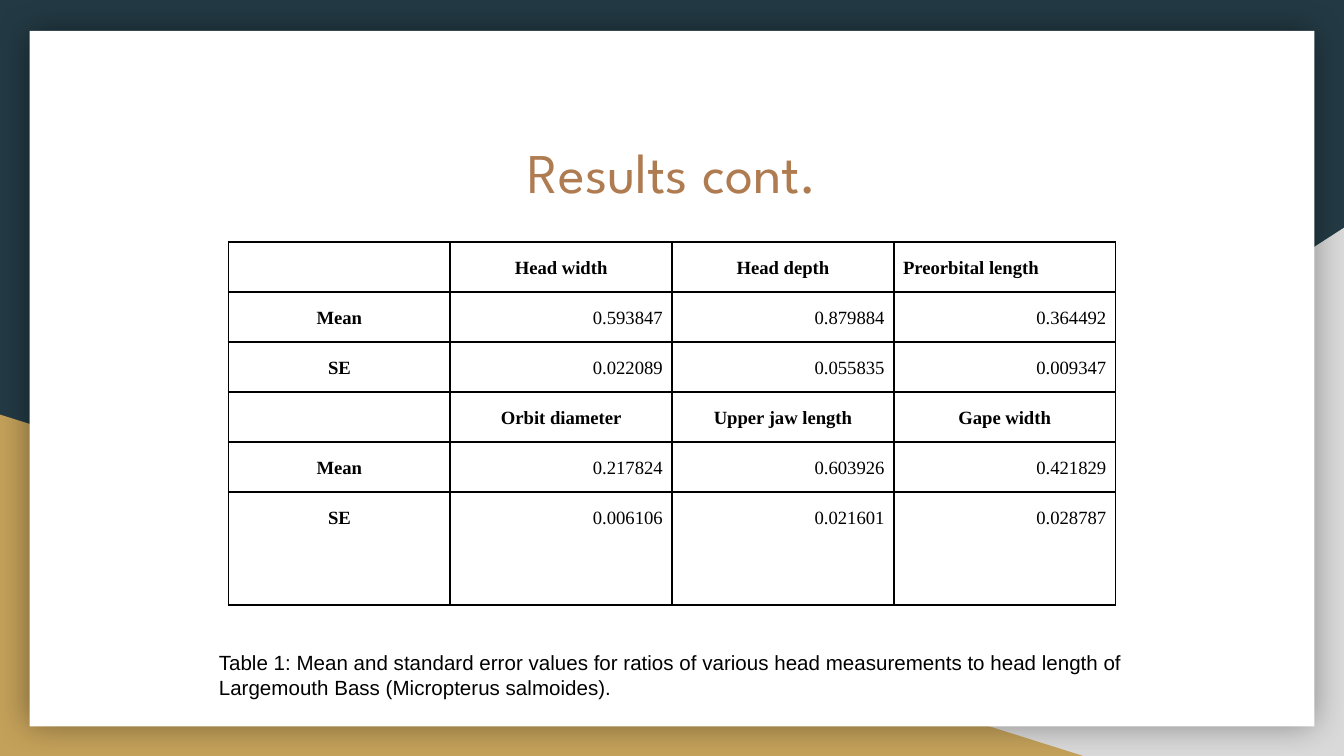
import pptx
import pptx.util
import pptx.dml.color
import pptx.enum.shapes
import pptx.enum.text
import pptx.oxml
import pptx.oxml.ns
from lxml import etree

Inches, Pt = pptx.util.Inches, pptx.util.Pt
Shape = pptx.enum.shapes.MSO_SHAPE
Align = pptx.enum.text.PP_ALIGN
qn = pptx.oxml.ns.qn

WIDE, HIGH = 10, 45 / 8
TITLE = {"name": "League Spartan", "size": Pt(30)}
HEAD = {"name": "Times New Roman", "size": Pt(10), "bold": True}
VALUE = {**HEAD, "bold": False}
NOTE = {"name": "Arial", "size": Pt(11)}
INSETS = {f"margin_{side}": Inches(0.1)
          for side in ("left", "top", "right", "bottom")}
CELL = {**INSETS, "margin_left": Inches(0.07), "margin_right": Inches(0.07),
        "margin_bottom": Inches(0.08)}

ROWS = [
    ["", "Head width", "Head depth", "Preorbital length"],
    ["Mean", "0.593847", "0.879884", "0.364492"],
    ["SE", "0.022089", "0.055835", "0.009347"],
    ["", "Orbit diameter", "Upper jaw length", "Gape width"],
    ["Mean", "0.217824", "0.603926", "0.421829"],
    ["SE", "0.006106", "0.021601", "0.028787"],
]


def color(code):
    return pptx.dml.color.RGBColor.from_string(code)


def apply(target, values):
    for name, value in values.items():
        setattr(target, name, value)


def write(para, text, font, code, align):
    para.alignment = align
    run = para.add_run()
    run.text = text
    apply(run.font, font)
    run.font.color.rgb = color(code)


def add_shape(slide, kind, box, code):
    shape = slide.shapes.add_shape(kind, *map(Inches, box))
    shape.shadow.inherit = False
    shape.fill.solid()
    shape.fill.fore_color.rgb = color(code)
    shape.line.fill.background()
    return shape


def add_glow(shape):
    """Put a soft, centred shadow around the shape."""
    effects = shape._element.spPr.find(qn("a:effectLst"))
    shade = etree.SubElement(effects, qn("a:outerShdw"), blurRad=str(Pt(18)),
                             dist="0", dir="0", algn="ctr", rotWithShape="0")
    tint = etree.SubElement(shade, qn("a:srgbClr"), val="000000")
    etree.SubElement(tint, qn("a:alpha"), val="40000")


def add_frame(slide, box):
    """Draw the dark ground, two corner wedges and the white card."""
    left, top, width, height = box
    base = top + height
    slide.background.fill.solid()
    slide.background.fill.fore_color.rgb = color("233A44")
    grey = add_shape(slide, Shape.RIGHT_TRIANGLE,
                     (left + width - 6.08, base - 3.93, 6.08, 3.93), "D9D9D9")
    grey._element.spPr.find(qn("a:xfrm")).set("flipH", "1")
    add_shape(slide, Shape.RIGHT_TRIANGLE,
              (left, base - 2.54, 8.06, 2.54), "C4A15A")
    card = add_shape(slide, Shape.RECTANGLE,
                     (left + 0.22, top + 0.23, width - 0.44, height - 0.45),
                     "FFFFFF")
    add_glow(card)


def add_text(slide, box, text, font, code, align):
    frame = slide.shapes.add_textbox(*map(Inches, box)).text_frame
    apply(frame, {**INSETS, "word_wrap": True})
    write(frame.paragraphs[0], text, font, code, align)


def add_edges(cell):
    props = cell._tc.get_or_add_tcPr()
    for side in "LRTB":
        line = etree.SubElement(props, qn(f"a:ln{side}"), w=str(Pt(1)))
        fill = etree.SubElement(line, qn("a:solidFill"))
        etree.SubElement(fill, qn("a:srgbClr"), val="000000")


def fill_cell(cell, text, label):
    apply(cell, CELL)
    add_edges(cell)
    cell.fill.background()
    para = cell.text_frame.paragraphs[0]
    if not text:
        etree.SubElement(para._p, qn("a:endParaRPr"), sz="1000")
        return
    para.line_spacing = 1.15
    align = Align.CENTER if label else Align.RIGHT
    if text == "Preorbital length":
        align = Align.LEFT
    write(para, text, HEAD if label else VALUE, "000000", align)


def add_grid(slide, box, rows):
    """Draw equal columns and rows; the last row takes the spare height."""
    left, top, width, height = box
    count, span = len(rows), len(rows[0])
    table = slide.shapes.add_table(count, span, *map(Inches, box)).table
    apply(table, {"first_row": False, "horz_banding": False})
    for col in table.columns:
        col.width = Inches(width / span)
    for row in table.rows:
        row.height = Inches(0.35)
    table.rows[count - 1].height = Inches(height - 0.35 * (count - 1))
    for r, row in enumerate(rows):
        for c, text in enumerate(row):
            fill_cell(table.cell(r, c), text, c == 0 or not row[0])


def main():
    deck = pptx.Presentation()
    apply(deck, {"slide_width": Inches(WIDE), "slide_height": Inches(HIGH)})
    slide = deck.slides.add_slide(deck.slide_layouts[6])
    add_frame(slide, (0, 0, WIDE, HIGH))
    add_text(slide, (0.9, 0.92, 8.21, 1.04), "Results cont.",
             TITLE, "AF7B51", Align.CENTER)
    add_grid(slide, (1.7, 1.8, 6.6, 2.59), ROWS)
    add_text(slide, (1.53, 4.74, 7.15, 0.6),
             "Table 1: Mean and standard error values for ratios of various "
             "head measurements to head length of Largemouth Bass "
             "(Micropterus salmoides).", NOTE, "000000", Align.LEFT)
    deck.save("out.pptx")


if __name__ == "__main__":
    main()
